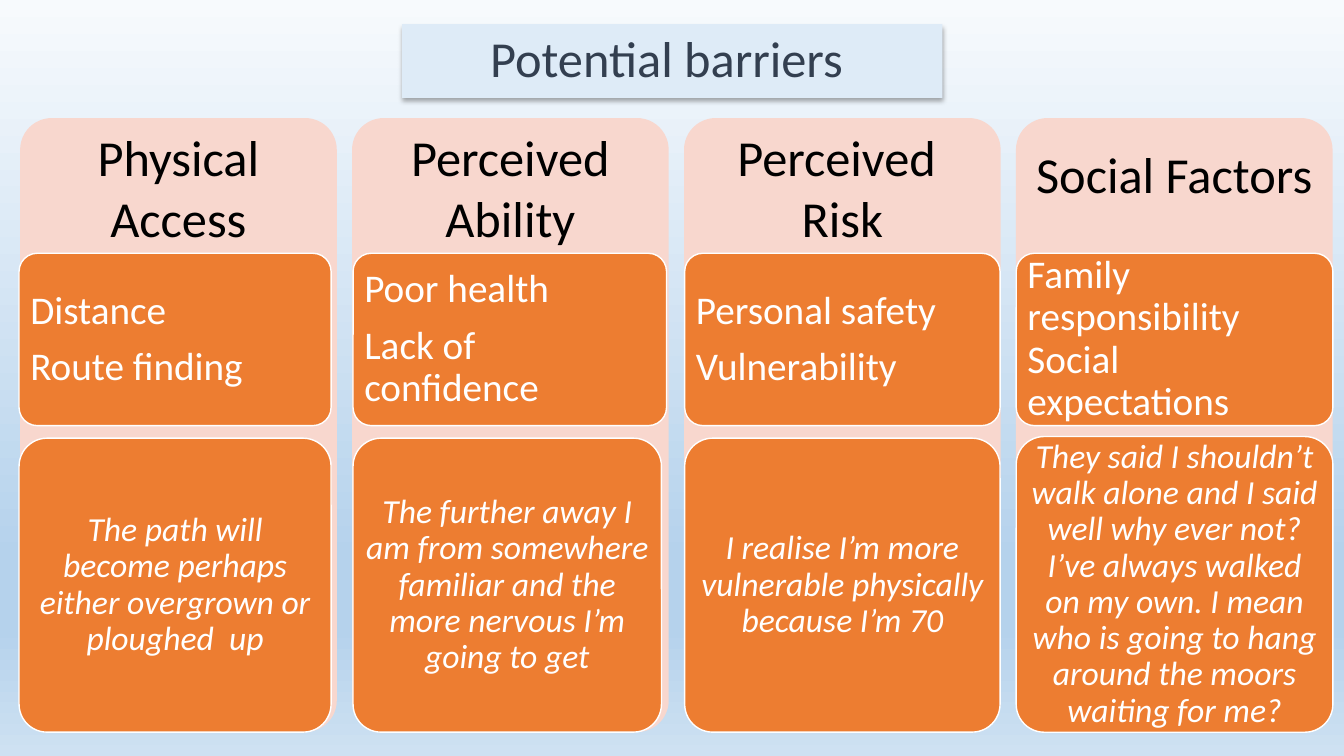
from dataclasses import dataclass

from lxml import etree
from pptx import Presentation
from pptx.dml.color import RGBColor
from pptx.enum import shapes, text
from pptx.oxml import ns
from pptx.util import Pt

FONT = "Calibri"
BLACK = RGBColor(0x00, 0x00, 0x00)
WHITE = RGBColor(0xFF, 0xFF, 0xFF)
SLATE = RGBColor(0x33, 0x3F, 0x50)
PALE_BLUE = RGBColor(0xDE, 0xEB, 0xF7)
PINK = RGBColor(0xF8, 0xD7, 0xCE)
ORANGE = RGBColor(0xED, 0x7D, 0x31)
SKY_TOP = RGBColor(0xF7, 0xFA, 0xFD)
SKY_MIDDLE = RGBColor(0xB5, 0xD2, 0xEC)
SKY_BOTTOM = RGBColor(0xCE, 0xE1, 0xF2)
SKY = [(0, SKY_TOP), (74, SKY_MIDDLE), (83, SKY_MIDDLE), (100, SKY_BOTTOM)]

PANEL_LEFT, PANEL_PITCH = 14.4, 237.1
PANEL_TOP, PANEL_WIDTH, PANEL_HEIGHT = 84.3, 226.2, 438.6
TOPIC_TOP, TOPIC_HEIGHT = 180.9, 123.1
CELL_BOTTOM = 523
CORNER_INSET = 0.29


@dataclass
class Barrier:
    heading: list
    topics: list
    quote: str
    left: float
    topic_width: float
    quote_width: float
    quote_top: float = 313
    heading_space: float = 340


BARRIERS = [
    Barrier(["Physical Access"], ["Distance", "Route finding"],
            "The path will become perhaps either overgrown or ploughed  up",
            13.6, 222.9, 222.9),
    Barrier(["Perceived Ability"], ["Poor health", "Lack of confidence"],
            "The further away I am from somewhere familiar and the more "
            "nervous I’m going to get",
            252.2, 223.9, 220.3),
    Barrier(["Perceived ", "Risk"], ["Personal safety", "Vulnerability"],
            "I realise I’m more vulnerable physically because I’m 70",
            489.1, 225.3, 225.3),
    Barrier(["Social Factors"], ["Family responsibility Social expectations"],
            "They said I shouldn’t walk alone and I said well why ever not? "
            "I’ve always walked on my own. I mean who is going to hang around "
            "the moors waiting for me?",
            725.9, 226.2, 226.2, quote_top=311.8, heading_space=359),
]


def add_element(parent, tag, **attributes):
    return etree.SubElement(parent, ns.qn(tag), attributes)


def paint_background(page):
    fill = page.background.fill
    fill.gradient()
    fill.gradient_angle = 270
    stops = page.background._cSld.find(".//" + ns.qn("a:gsLst"))
    for stop in list(stops):
        stops.remove(stop)
    for position, color in SKY:
        stop = add_element(stops, "a:gs", pos=str(position * 1000))
        add_element(stop, "a:srgbClr", val=str(color))


def add_soft_shadow(shape):
    effects = add_element(shape._element.spPr, "a:effectLst")
    shadow = add_element(effects, "a:outerShdw", blurRad=str(Pt(3.5)),
                         dist=str(Pt(2.2)), dir="5400000", algn="t", rotWithShape="0")
    color = add_element(shadow, "a:srgbClr", val=str(BLACK))
    add_element(color, "a:alpha", val="32000")


def write(frame, lines, size, color, align=text.PP_ALIGN.CENTER,
          spacing=0.9, after=0, italic=False):
    frame.word_wrap = True
    frame.auto_size = text.MSO_AUTO_SIZE.NONE
    frame.vertical_anchor = text.MSO_ANCHOR.MIDDLE
    for index, line in enumerate(lines):
        para = frame.add_paragraph() if index else frame.paragraphs[0]
        para.alignment = align
        para.line_spacing = spacing
        para.space_after = Pt(after)
        span = para.add_run()
        span.text = line
        span.font.name = FONT
        span.font.size = Pt(size)
        span.font.italic = italic
        span.font.color.rgb = color


def set_margins(frame, side, top, bottom):
    frame.margin_left = frame.margin_right = Pt(side)
    frame.margin_top, frame.margin_bottom = Pt(top), Pt(bottom)


def add_title(page):
    title = page.shapes.title
    title.left, title.top = Pt(287.3), Pt(17.3)
    title.width, title.height = Pt(385.9), Pt(52.6)
    title.fill.solid()
    title.fill.fore_color.rgb = PALE_BLUE
    add_soft_shadow(title)
    write(title.text_frame, ["Potential barriers "], 36, SLATE)


def add_rounded(page, left, top, width, height, radius, color):
    box = page.shapes.add_shape(shapes.MSO_SHAPE.ROUNDED_RECTANGLE,
                                Pt(left), Pt(top), Pt(width), Pt(height))
    box.adjustments[0] = radius / min(width, height)
    box.shadow.inherit = False
    box.fill.solid()
    box.fill.fore_color.rgb = color
    box.line.fill.background()
    return box


def add_panel(page, left, barrier):
    box = add_rounded(page, left, PANEL_TOP, PANEL_WIDTH, PANEL_HEIGHT, 22.6, PINK)
    set_margins(box.text_frame, 4.2, 0, barrier.heading_space)
    write(box.text_frame, barrier.heading, 36, BLACK, spacing=1)


def add_cell(page, left, top, width, height, radius, lines, size, **style):
    box = add_rounded(page, left, top, width, height, radius, ORANGE)
    box.line.color.rgb = WHITE
    box.line.width = Pt(1)
    margin = 8 - CORNER_INSET * radius
    set_margins(box.text_frame, margin, margin, margin)
    write(box.text_frame, lines, size, WHITE, **style)


def add_barrier(page, index, barrier):
    add_panel(page, PANEL_LEFT + index * PANEL_PITCH, barrier)
    add_cell(page, barrier.left, TOPIC_TOP, barrier.topic_width, TOPIC_HEIGHT, 13,
             barrier.topics, 28, align=text.PP_ALIGN.LEFT, after=9.8)
    add_cell(page, barrier.left, barrier.quote_top, barrier.quote_width,
             CELL_BOTTOM - barrier.quote_top, 20, [barrier.quote], 24, italic=True)


def main():
    deck = Presentation()
    deck.slide_width, deck.slide_height = Pt(960), Pt(540)
    page = deck.slides.add_slide(deck.slide_layouts[5])
    paint_background(page)
    add_title(page)
    for index, barrier in enumerate(BARRIERS):
        add_barrier(page, index, barrier)
    deck.save("out.pptx")


if __name__ == "__main__":
    main()
